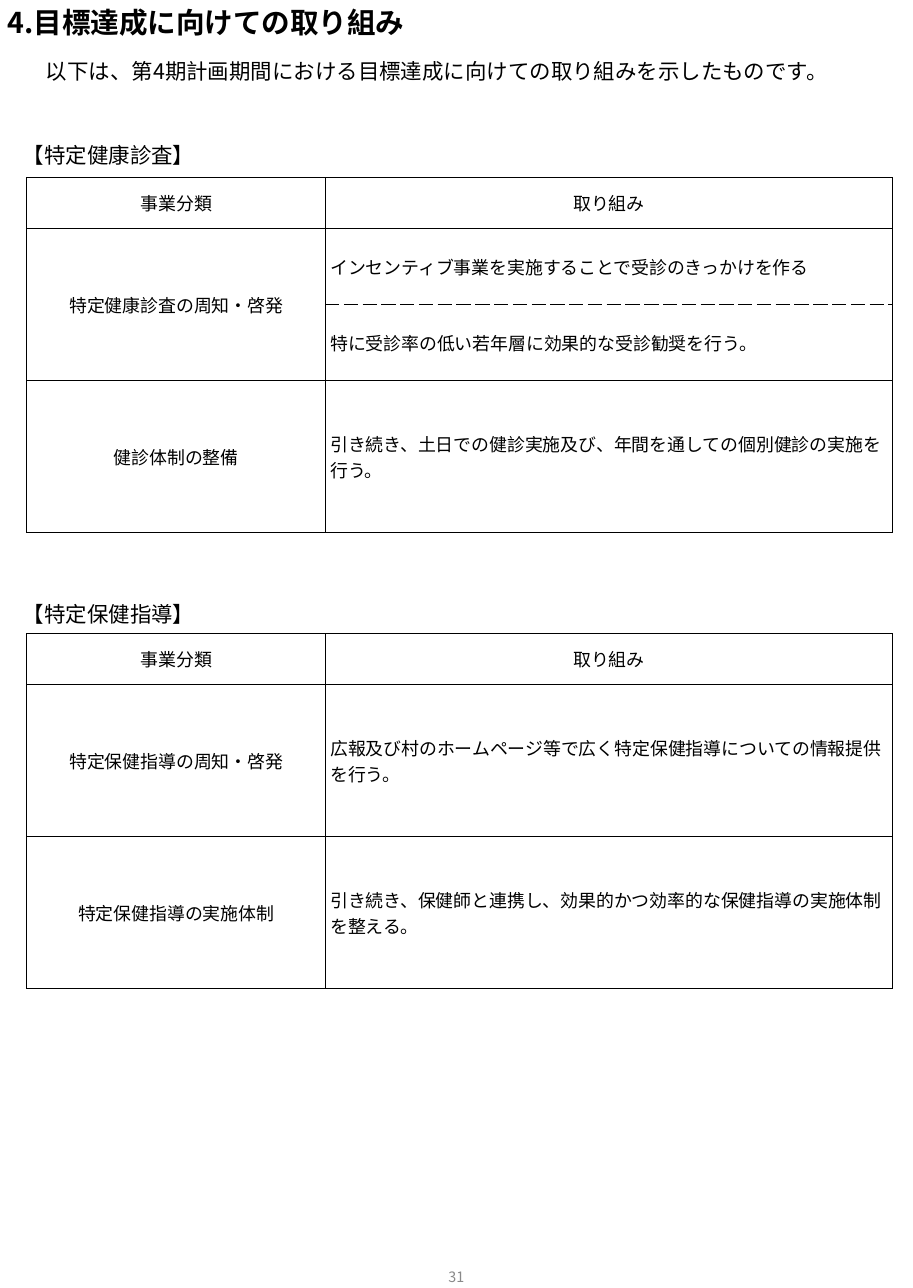
from lxml import etree
from pptx import Presentation
from pptx.dml.color import RGBColor
from pptx.enum.text import MSO_ANCHOR, MSO_AUTO_SIZE, PP_ALIGN
from pptx.oxml.ns import qn
from pptx.util import Pt

FONT = "Noto Sans CJK JP"
BLACK, GREY = "000000", "898989"
LEFT, CENTER, JUSTIFY = PP_ALIGN.LEFT, PP_ALIGN.CENTER, PP_ALIGN.JUSTIFY
TOP, MIDDLE = MSO_ANCHOR.TOP, MSO_ANCHOR.MIDDLE
NO_AUTOFIT = MSO_AUTO_SIZE.NONE
TITLE_ONLY = 5

HEADING_HEIGHT = 21.6
HEADER_HEIGHT, GROUP_HEIGHT = 28.4, 85.1
CATEGORY_SHARE = 0.345
HEADER = ("事業分類", "取り組み")
CHECKUP = [
    ("特定健康診査の周知・啓発", [
        "インセンティブ事業を実施することで受診のきっかけを作る",
        "特に受診率の低い若年層に効果的な受診勧奨を行う。"]),
    ("健診体制の整備", [
        "引き続き、土日での健診実施及び、年間を通しての個別健診の実施を行う。"]),
]
GUIDANCE = [
    ("特定保健指導の周知・啓発", [
        "広報及び村のホームページ等で広く特定保健指導についての情報提供を行う。"]),
    ("特定保健指導の実施体制", [
        "引き続き、保健師と連携し、効果的かつ効率的な保健指導の実施体制を整える。"]),
]


def color(hex_value):
    return RGBColor.from_string(hex_value)


def write(frame, text, size=12, hex_value=BLACK, bold=False, align=LEFT,
          spacing=1.0, indent=0):
    """Put one formatted paragraph into a text frame."""
    paragraph = frame.paragraphs[0]
    paragraph.alignment = align
    paragraph.line_spacing = spacing
    if indent:
        paragraph._p.get_or_add_pPr().set("indent", str(Pt(indent)))
    run = paragraph.add_run()
    run.text = text
    run.font.size = Pt(size)
    run.font.bold = bold
    run.font.name = FONT
    run.font.color.rgb = color(hex_value)
    east_asian = etree.SubElement(run._r.get_or_add_rPr(), qn("a:ea"))
    east_asian.set("typeface", FONT)


def place(shape, box, anchor=MIDDLE):
    """Move a text shape to its box and clear its side margins."""
    shape.left, shape.top, shape.width, shape.height = map(Pt, box)
    frame = shape.text_frame
    frame.word_wrap = True
    frame.auto_size = NO_AUTOFIT
    frame.vertical_anchor = anchor
    frame.margin_left = frame.margin_right = 0
    frame.margin_top = frame.margin_bottom = Pt(3.6)
    return frame


def text_box(slide, box, text, anchor=MIDDLE, **text_format):
    shape = slide.shapes.add_textbox(*map(Pt, box))
    write(place(shape, box, anchor), text, **text_format)


def border_cell(cell, dashed_sides=()):
    properties = cell._tc.get_or_add_tcPr()
    for side in ("lnL", "lnR", "lnT", "lnB"):
        line = etree.SubElement(properties, qn(f"a:{side}"), w=str(Pt(0.5)))
        fill = etree.SubElement(line, qn("a:solidFill"))
        etree.SubElement(fill, qn("a:srgbClr"), val=BLACK)
        dash = "dash" if side in dashed_sides else "solid"
        etree.SubElement(line, qn("a:prstDash"), val=dash)


def fill_cell(cell, text, align, dashed_sides=()):
    border_cell(cell, dashed_sides)
    cell.fill.background()
    cell.vertical_anchor = MIDDLE
    cell.margin_left = cell.margin_right = Pt(2.7)
    cell.margin_top = cell.margin_bottom = Pt(3.6)
    if text:
        write(cell.text_frame, text, size=10, align=align)


def program_table(slide, box, groups):
    """Each category fills an equal band, shared evenly by its efforts."""
    left, top, width, height = box
    row_count = 1 + sum(len(efforts) for _, efforts in groups)
    table = slide.shapes.add_table(row_count, 2, *map(Pt, box)).table
    table.first_row = table.horz_banding = False
    table.columns[0].width = Pt(width * CATEGORY_SHARE)
    table.columns[1].width = Pt(width * (1 - CATEGORY_SHARE))

    # Header row
    table.rows[0].height = Pt(HEADER_HEIGHT)
    for column, label in enumerate(HEADER):
        fill_cell(table.cell(0, column), label, CENTER)

    # Categories with their efforts
    row = 1
    for category, efforts in groups:
        last = len(efforts) - 1
        if last:
            table.cell(row, 0).merge(table.cell(row + last, 0))
        for index, effort in enumerate(efforts):
            table.rows[row].height = Pt(GROUP_HEIGHT / len(efforts))
            fill_cell(table.cell(row, 0), "" if index else category, CENTER)
            dashed = [side for side, inner in
                      (("lnT", index > 0), ("lnB", index < last)) if inner]
            fill_cell(table.cell(row, 1), effort, LEFT, dashed)
            row += 1


def program_section(slide, left, top, width, heading, groups, gap=0):
    text_box(slide, (left - 2.2, top, 455, HEADING_HEIGHT), heading)
    height = HEADER_HEIGHT + GROUP_HEIGHT * len(groups)
    table_top = top + HEADING_HEIGHT + gap
    program_table(slide, (left, table_top, width, height), groups)


def opening(slide, left, top, width):
    # Title
    title = place(slide.shapes.title, (left, top, width, 26.6))
    write(title, "4.目標達成に向けての取り組み", size=16, bold=True, align=JUSTIFY)
    # Lead sentence
    text_box(slide, (left + 9.4, top + 26, width - 16, 24.5),
             "以下は、第4期計画期間における目標達成に向けての取り組みを示したものです。",
             anchor=TOP, align=JUSTIFY, spacing=1.25, indent=12)


def main():
    presentation = Presentation()
    presentation.slide_width, presentation.slide_height = Pt(510.5), Pt(720)
    slide = presentation.slides.add_slide(
        presentation.slide_layouts[TITLE_ONLY])

    opening(slide, 4.3, -0.7, 506)
    program_section(slide, 15, 75.6, 484, "【特定健康診査】", CHECKUP, gap=2)
    program_section(slide, 15, 332.6, 484, "【特定保健指導】", GUIDANCE)

    # Page number
    text_box(slide, (195.8, 694.8, 118.8, 38.2), "31",
             size=8, hex_value=GREY, align=CENTER)
    presentation.save("out.pptx")


if __name__ == "__main__":
    main()
